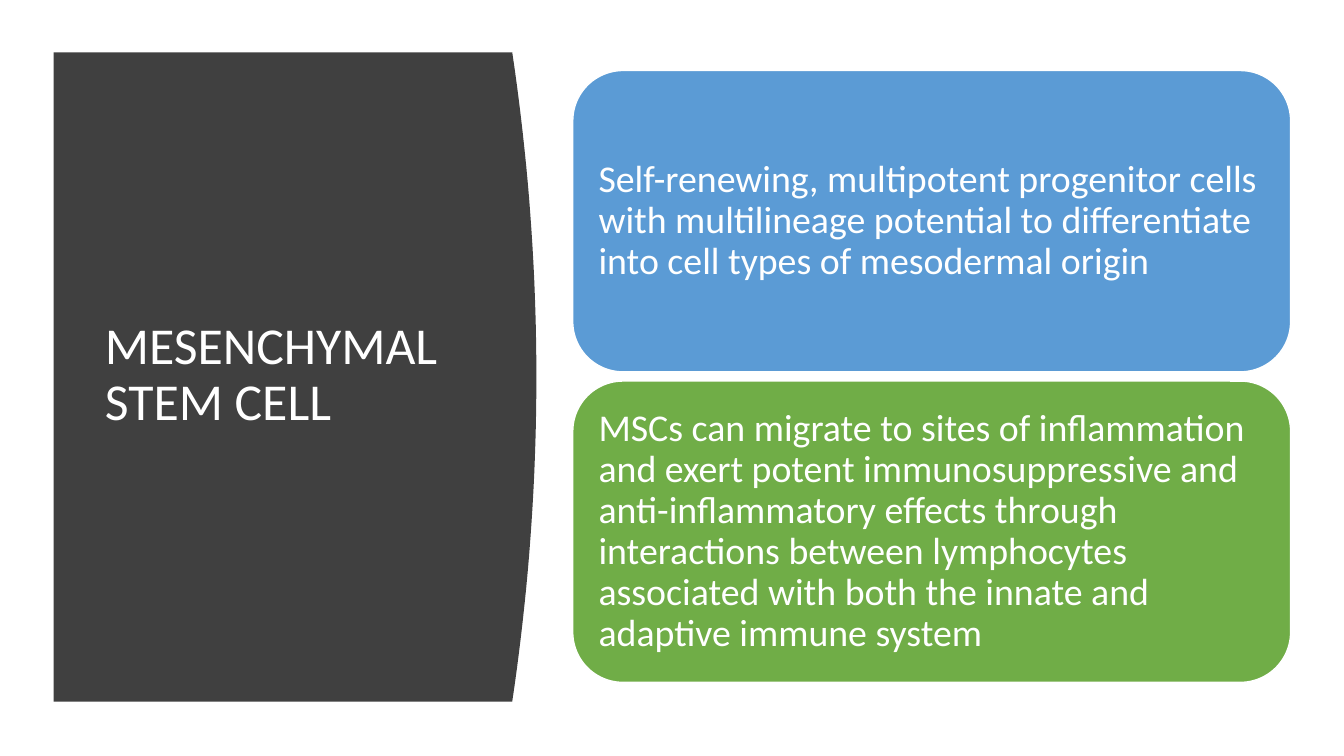
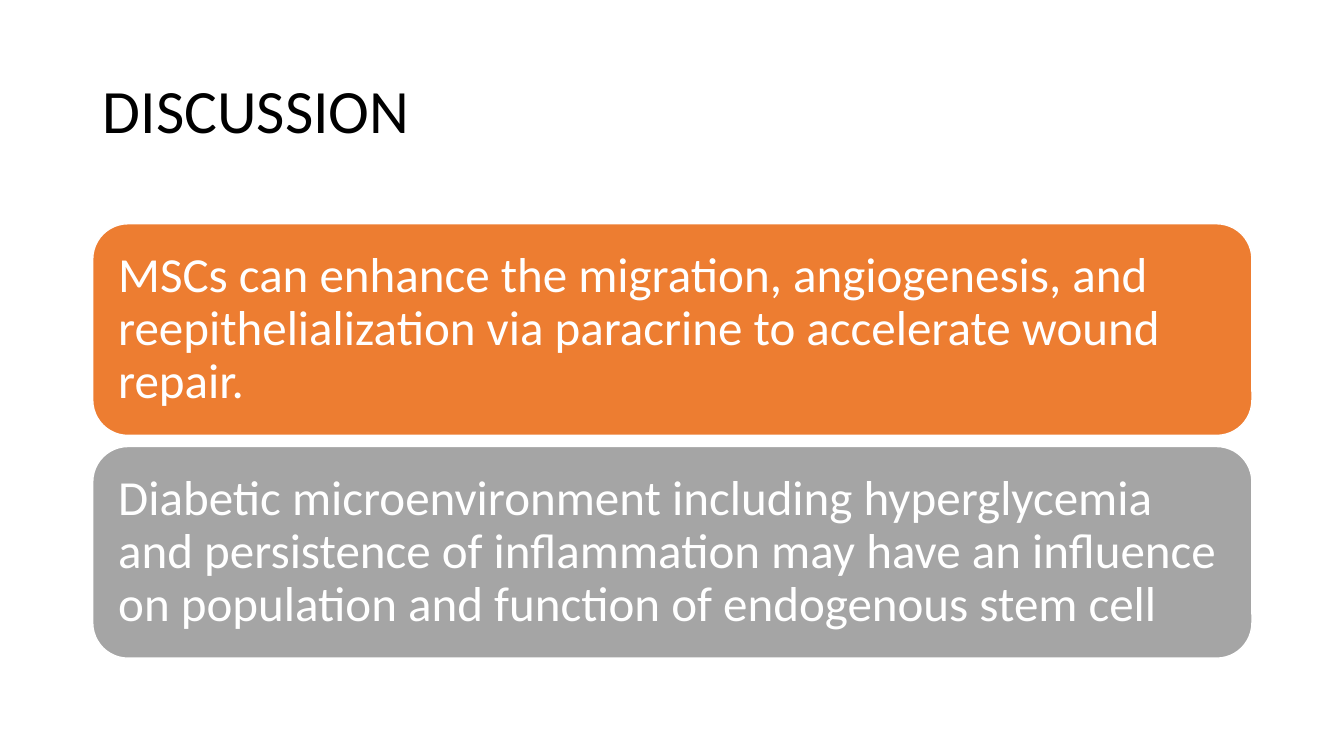
from dataclasses import dataclass

from pptx import Presentation
from pptx.dml.color import RGBColor
from pptx.enum.shapes import MSO_SHAPE
from pptx.enum.text import MSO_ANCHOR, MSO_AUTO_SIZE, PP_ALIGN
from pptx.util import Inches, Pt

ROUNDED = MSO_SHAPE.ROUNDED_RECTANGLE
MIDDLE = MSO_ANCHOR.MIDDLE
NO_AUTOFIT = MSO_AUTO_SIZE.NONE
LEFT = PP_ALIGN.LEFT

FONT = "Calibri"
LINE_SPACING = 0.9
TITLE_ONLY = 5
WHITE, BLACK, CHARCOAL = "FFFFFF", "000000", "404040"
BLUE, GREEN, ORANGE, GRAY = "5B9BD5", "70AD47", "ED7D31", "A5A5A5"


@dataclass
class Box:
    """A rectangle in inches."""
    left: float
    top: float
    width: float
    height: float

    def inside(self, left, top, width, height):
        """Return a box given as percentages of this one."""
        return Box(self.left + self.width * left / 100,
                   self.top + self.height * top / 100,
                   self.width * width / 100, self.height * height / 100)

    def emu(self):
        """Return left, top, width and height as lengths."""
        return [Inches(v) for v in (self.left, self.top, self.width, self.height)]


PAGE = Box(0, 0, 13.33, 7.5)


def rgb(value):
    """Turn a hex string into a colour."""
    return RGBColor.from_string(value)


def write(frame, text, size=27, color=WHITE, inset=None):
    """Fill a text frame with one left-aligned, vertically centred paragraph."""
    frame.word_wrap = True
    frame.auto_size = NO_AUTOFIT
    frame.vertical_anchor = MIDDLE
    if inset is not None:
        frame.margin_left = frame.margin_right = Inches(inset)
        frame.margin_top = frame.margin_bottom = Inches(inset)
    paragraph = frame.paragraphs[0]
    paragraph.alignment = LEFT
    paragraph.line_spacing = LINE_SPACING
    run = paragraph.add_run()
    run.text = text
    run.font.name = FONT
    run.font.size = Pt(size)
    run.font.color.rgb = rgb(color)


def place_title(slide, box, text, **style):
    """Move and format the title placeholder."""
    title = slide.shapes.title
    title.left, title.top, title.width, title.height = box.emu()
    write(title.text_frame, text, **style)


def curved_panel(slide, box, bulge=0.05, steps=40):
    """Draw a dark panel behind the title, its right side bowed outward."""
    left, top, width, height = box.emu()
    edge = []
    for step in range(steps + 1):
        share = step / steps
        dip = bulge * (2 * share - 1) ** 2
        edge.append((round(left + width * (1 - dip)), round(top + height * share)))
    builder = slide.shapes.build_freeform(left, top, scale=1.0)
    builder.add_line_segments(edge + [(left, top + height)], close=True)
    panel = builder.convert_to_shape()
    panel.shadow.inherit = False
    panel.fill.solid()
    panel.fill.fore_color.rgb = rgb(CHARCOAL)
    panel.line.fill.background()
    slide.shapes.title.element.addprevious(panel.element)


def card_stack(slide, box, gap, cards, **style):
    """Stack equal rounded cards; the gap is a percentage of the box height."""
    height = (100 - gap * (len(cards) - 1)) / len(cards)
    for row, (text, color) in enumerate(cards):
        spot = box.inside(0, row * (height + gap), 100, height)
        card = slide.shapes.add_shape(ROUNDED, *spot.emu())
        card.shadow.inherit = False
        card.fill.solid()
        card.fill.fore_color.rgb = rgb(color)
        card.line.color.rgb = rgb(WHITE)
        card.line.width = Pt(1)
        write(card.text_frame, text, **style)


def side_panel_slide(slide, page, title, cards):
    """Lay out a titled side panel with cards on the right."""
    panel = page.inside(3.98, 6.93, 35.93, 85.87)
    curved_panel(slide, panel)
    place_title(slide, panel.inside(8.56, 9.16, 78.08, 81.37), title,
                size=37, color=WHITE)
    card_stack(slide, page.inside(42.62, 9.33, 53.41, 80.93), 1.5, cards,
               size=27, inset=0.11)


def top_title_slide(slide, page, title, cards):
    """Lay out a title above full-width cards."""
    place_title(slide, page.inside(6.9, 5.33, 86.25, 19.33), title,
                size=44, color=BLACK)
    card_stack(slide, page.inside(6.9, 29.6, 86.25, 57.47), 2.55, cards,
               size=35, inset=0.15)


SLIDES = [
    (side_panel_slide, "MESENCHYMAL STEM CELL", [
        ("Self-renewing, multipotent progenitor cells with multilineage "
         "potential to differentiate into cell types of mesodermal origin", BLUE),
        ("MSCs can migrate to sites of inflammation and exert potent "
         "immunosuppressive and anti-inflammatory effects through interactions "
         "between lymphocytes associated with both the innate and adaptive "
         "immune system", GREEN),
    ]),
    (top_title_slide, "DISCUSSION", [
        ("MSCs can enhance the migration, angiogenesis, and "
         "reepithelialization via paracrine to accelerate wound repair.", ORANGE),
        ("Diabetic microenvironment including hyperglycemia and persistence of "
         "inflammation may have an influence on population and function of "
         "endogenous stem cell", GRAY),
    ]),
]


def main():
    """Build and save the presentation."""
    deck = Presentation()
    deck.slide_width, deck.slide_height = PAGE.emu()[2:]
    for build, title, cards in SLIDES:
        slide = deck.slides.add_slide(deck.slide_layouts[TITLE_ONLY])
        build(slide, PAGE, title, cards)
    deck.save("out.pptx")


if __name__ == "__main__":
    main()
